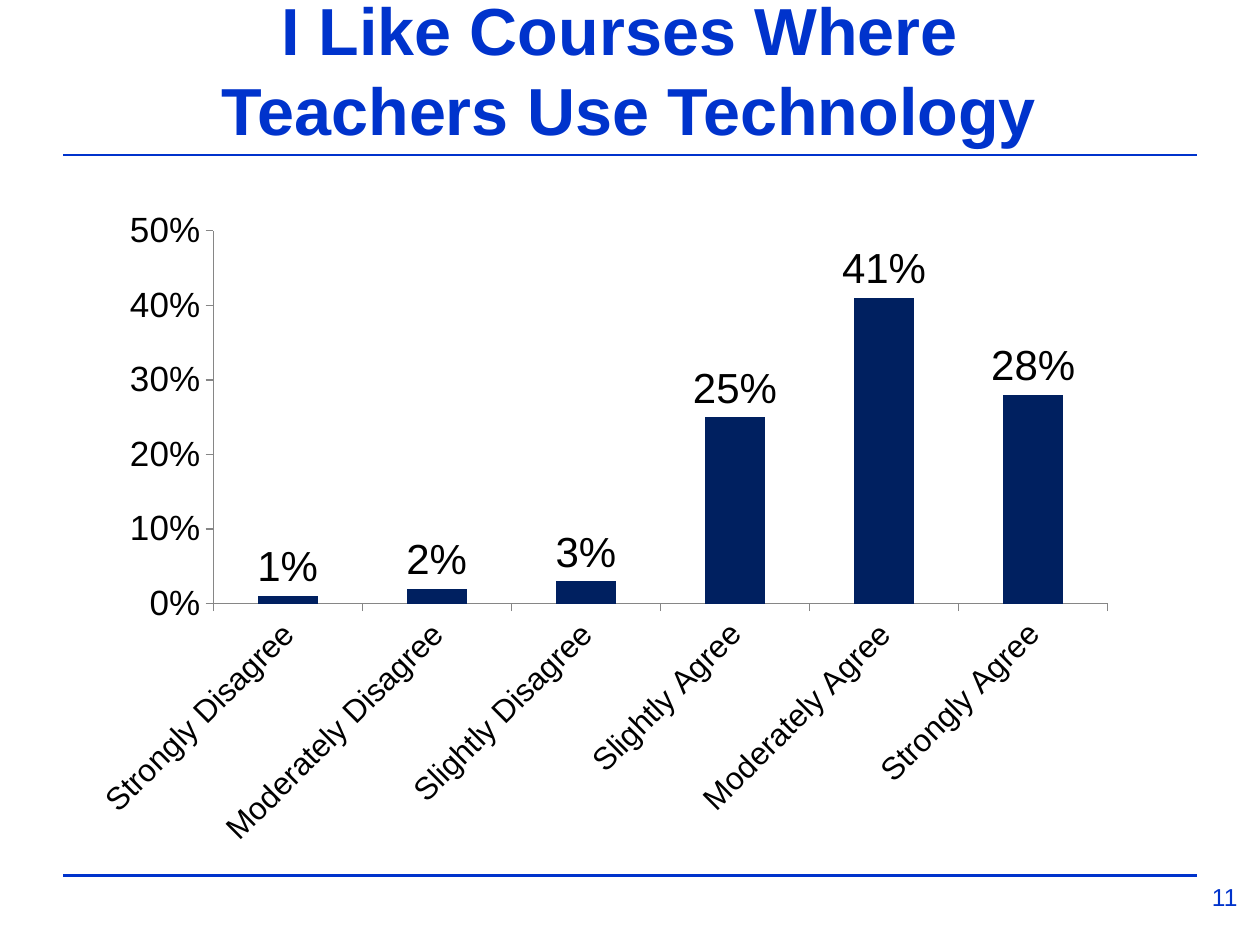
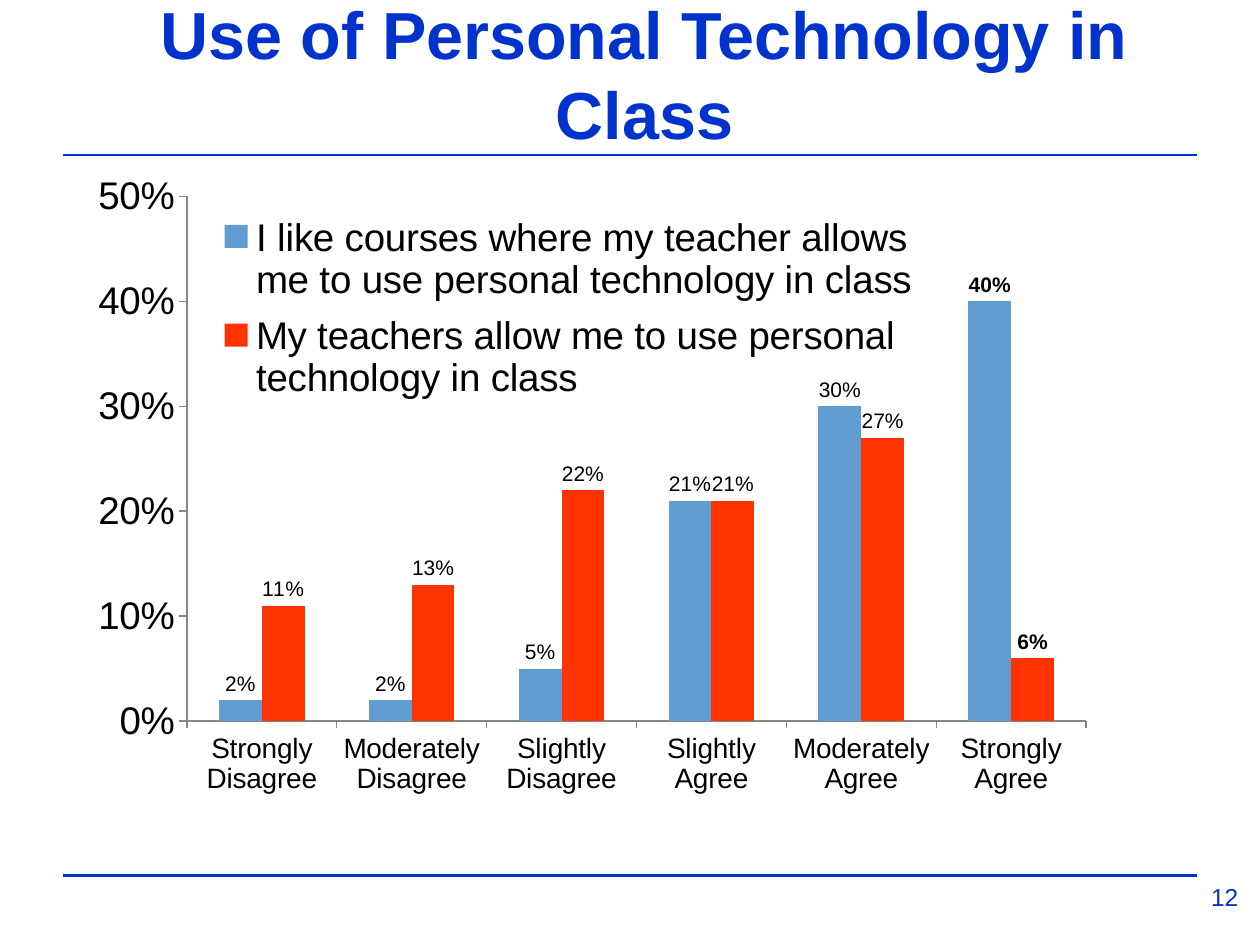
import lxml.etree
import pptx
import pptx.chart.data
import pptx.dml.color
import pptx.enum.chart
import pptx.enum.shapes
import pptx.enum.text
import pptx.oxml
import pptx.oxml.ns
import pptx.util

COLORS = {"brand": "0033CC", "ink": "000000", "axis": "868686",
          "navy": "002060", "sky": "629DD1", "red": "FF3300"}
FONT = "Arial"
CELL = pptx.util.Inches(0.1)  # the grid has 100 columns and 75 rows
COLUMNS, ROWS = 100, 75
RULE_ROWS = (12.3, 69.5)
RULE_ENDS = (5, 95)
NUMBER_BOX = (94.4, 69.5, 5.6, 4.2)
TITLE_STYLE = {"size": 38, "bold": True, "color": "brand"}
NUMBER_STYLE = {"size": 14, "color": "brand"}
AGREEMENT = [f"{degree} {side}" for side, degrees in (
    ("Disagree", ("Strongly", "Moderately", "Slightly")),
    ("Agree", ("Slightly", "Moderately", "Strongly"))) for degree in degrees]

CHART_PAGES = [
    {"number": 11,
     "title": ("I Like Courses Where ", "Teachers Use Technology"),
     "title_box": (4.3, 2.1, 91.3, 10.2),
     "chart_box": (7.5, 16.2, 81.9, 54.3),
     "plot": (0.115, 0.039, 0.867, 0.545),
     "sizes": {"category": 18, "value": 20, "label": 24},
     "slant": -45,
     "series": [("Series 1", "navy", (0.01, 0.02, 0.03, 0.25, 0.41, 0.28))]},
    {"number": 12,
     "title": ("Use of Personal Technology in Class",),
     "title_box": (5.1, 5.2, 92.1, 7.4),
     "chart_box": (5.9, 13.9, 82.7, 54.3),
     "plot": (0.108, 0.031, 0.863, 0.767),
     "sizes": {"category": 16, "value": 22, "label": 12, "legend": 22},
     "legend": (0.124, 0.04, 0.7, 0.31),
     "bold_point": 5,
     "series": [
         ("I like courses where my teacher allows me to use personal technology in class",
          "sky", (0.02, 0.02, 0.05, 0.21, 0.3, 0.4)),
         ("My teachers allow me to use personal technology in class",
          "red", (0.11, 0.13, 0.22, 0.21, 0.27, 0.06))]},
]


def grid(*cells):
    return [round(cell * CELL) for cell in cells]


def rgb(name):
    return pptx.dml.color.RGBColor.from_string(COLORS[name])


def set_font(font, size, color="ink", bold=False):
    values = {"name": FONT, "size": pptx.util.Pt(size), "bold": bold}
    for name, value in values.items():
        setattr(font, name, value)
    font.color.rgb = rgb(color)


def add_element(parent, tag, position, **attributes):
    element = pptx.oxml.parse_xml(f"<{tag} {pptx.oxml.ns.nsdecls('a', 'c')}/>")
    for name, value in attributes.items():
        element.set(name, str(value))
    parent.insert(position, element)
    return element


def set_layout(parent, position, shares, inner=False):
    """Fix a chart part at left, top, width and height shares of the chart."""
    for old in parent.findall(pptx.oxml.ns.qn("c:layout")):
        parent.remove(old)
    layout = add_element(parent, "c:layout", position)
    manual = add_element(layout, "c:manualLayout", 0)
    settings = [("layoutTarget", "inner")] if inner else []
    settings += [("xMode", "edge"), ("yMode", "edge")]
    settings += zip("xywh", shares)
    for index, (tag, value) in enumerate(settings):
        add_element(manual, f"c:{tag}", index, val=value)


def add_text(page, box, lines, style, anchor):
    frame = page.shapes.add_textbox(*grid(*box)).text_frame
    frame.word_wrap = True
    frame.vertical_anchor = anchor
    para = frame.paragraphs[0]
    para.alignment = pptx.enum.text.PP_ALIGN.CENTER
    for index, line in enumerate(lines):
        if index:
            para.add_line_break()
        span = para.add_run()
        span.text = line
        set_font(span.font, **style)


def add_rules(page):
    start, end = RULE_ENDS
    for row in RULE_ROWS:
        rule = page.shapes.add_connector(
            pptx.enum.shapes.MSO_CONNECTOR.STRAIGHT, *grid(start, row, end, row))
        rule.line.color.rgb = rgb("brand")
        rule.line.width = pptx.util.Pt(1.5)
        properties = rule._element.spPr
        add_element(properties, "a:effectLst", len(properties))


def style_axes(chart, sizes, slant):
    for axis, size in ((chart.category_axis, sizes["category"]),
                       (chart.value_axis, sizes["value"])):
        axis.has_major_gridlines = False
        axis.major_tick_mark = pptx.enum.chart.XL_TICK_MARK.OUTSIDE
        axis.format.line.color.rgb = rgb("axis")
        axis.format.line.width = pptx.util.Pt(0.75)
        set_font(axis.tick_labels.font, size)
    scale = {"minimum_scale": 0, "maximum_scale": 0.5, "major_unit": 0.1}
    for name, value in scale.items():
        setattr(chart.value_axis, name, value)
    chart.value_axis.tick_labels.number_format = "0%"
    chart.value_axis.tick_labels.number_format_is_linked = False
    if slant:
        body = chart.category_axis._element.find(".//" + pptx.oxml.ns.qn("a:bodyPr"))
        body.set("rot", str(slant * 60000))
        body.set("vert", "horz")


def style_series(series, color, size, bold_point):
    series.format.fill.solid()
    series.format.fill.fore_color.rgb = rgb(color)
    series.invert_if_negative = False
    labels = series.data_labels
    values = {"show_value": True, "number_format": "0%",
              "number_format_is_linked": False,
              "position": pptx.enum.chart.XL_LABEL_POSITION.OUTSIDE_END}
    for name, value in values.items():
        setattr(labels, name, value)
    set_font(labels.font, size)
    if bold_point is not None:
        label = series.points[bold_point].data_label
        set_font(label.font, size, bold=True)
        label.position = values["position"]
        element = labels._element.find(pptx.oxml.ns.qn("c:dLbl"))
        add_element(element, "c:numFmt", 1, formatCode="0%", sourceLinked=0)


def add_legend(chart, shares, size):
    chart.has_legend = True
    legend = chart.legend
    legend.position = pptx.enum.chart.XL_LEGEND_POSITION.RIGHT
    legend.include_in_layout = True
    set_font(legend.font, size)
    set_layout(legend._element, 1, shares)


def add_column_chart(page, box, content):
    data = pptx.chart.data.CategoryChartData(number_format="0%")
    data.categories = AGREEMENT
    for name, color, values in content["series"]:
        data.add_series(name, values)
    chart = page.shapes.add_chart(
        pptx.enum.chart.XL_CHART_TYPE.COLUMN_CLUSTERED, *grid(*box), data).chart
    chart.has_title = False
    chart.has_legend = False
    set_font(chart.font, 10)
    space = chart._chartSpace
    background = add_element(space, "c:spPr", space.index(space.chart) + 1)
    add_element(background, "a:noFill", 0)
    outline = add_element(background, "a:ln", 1)
    add_element(outline, "a:noFill", 0)
    set_layout(space.chart.plotArea, 0, content["plot"], inner=True)
    plot = chart.plots[0]
    plot.gap_width = 150
    plot.vary_by_categories = False
    sizes = content["sizes"]
    style_axes(chart, sizes, content.get("slant"))
    for series, (name, color, values) in zip(plot.series, content["series"]):
        style_series(series, color, sizes["label"], content.get("bold_point"))
    if "legend" in content:
        add_legend(chart, content["legend"], sizes["legend"])


def add_chart_page(deck, content):
    page = deck.slides.add_slide(deck.slide_layouts[6])
    anchors = pptx.enum.text.MSO_ANCHOR
    add_rules(page)
    add_text(page, content["title_box"], content["title"], TITLE_STYLE, anchors.BOTTOM)
    add_text(page, NUMBER_BOX, [str(content["number"])], NUMBER_STYLE, anchors.TOP)
    add_column_chart(page, content["chart_box"], content)


def main():
    deck = pptx.Presentation()
    deck.slide_width, deck.slide_height = grid(COLUMNS, ROWS)
    for content in CHART_PAGES:
        add_chart_page(deck, content)
    deck.save("out.pptx")


if __name__ == "__main__":
    main()
